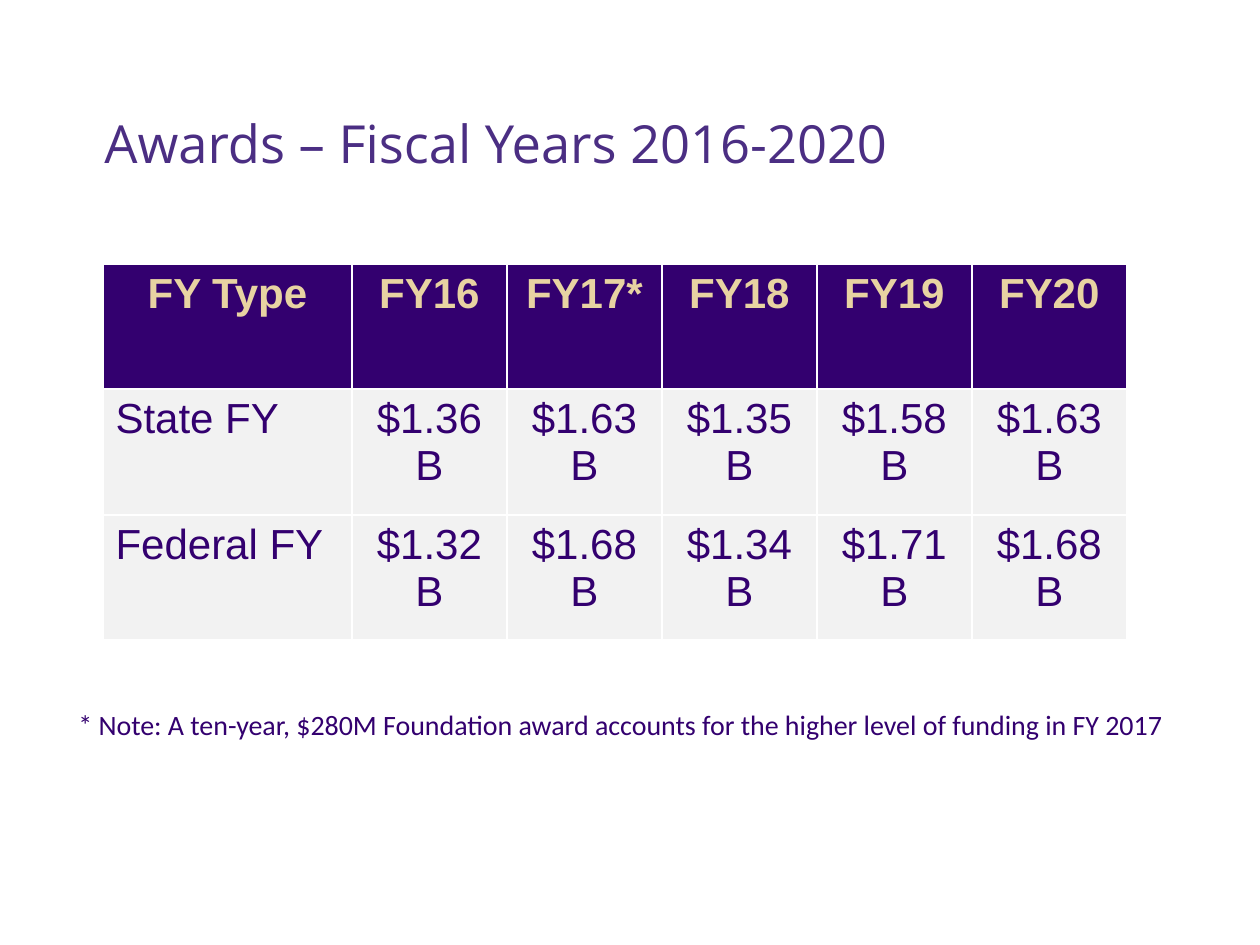
from lxml.etree import SubElement as Sub
from pptx import Presentation
from pptx.dml.color import RGBColor as Rgb
from pptx.enum.text import MSO_ANCHOR as Anchor, PP_ALIGN as Align
from pptx.oxml.ns import qn
from pptx.util import Pt

SCALE = 914400 / 126
COLORS = {
    "title": "4B2E83",
    "ink": "33006F",
    "gold": "E8D3A2",
    "pale": "F2F2F2",
    "rule": "FFFFFF",
}
HEAD = {"name": "Arial", "size": Pt(24), "bold": True}
BODY = {"name": "Arial", "size": Pt(24), "bold": False}
ROWS = [
    ["FY Type", "FY16", "FY17*", "FY18", "FY19", "FY20"],
    ["State FY", "$1.36B", "$1.63B", "$1.35B", "$1.58B", "$1.63B"],
    ["Federal FY", "$1.32B", "$1.68B", "$1.34B", "$1.71B", "$1.68B"],
]
WIDTHS = [249] + [155] * 5
HEIGHTS = [125, 126, 125]


def px(num):
    return round(num * SCALE)


def write(frame, text, color, style):
    """Put one styled paragraph in a text frame and return it."""
    para = frame.paragraphs[0]
    run = para.add_run()
    run.text = text
    for key, value in style.items():
        setattr(run.font, key, value)
    run.font.color.rgb = Rgb.from_string(COLORS[color])
    return para


def add_text(slide, box, text, color, style, layout):
    frame = slide.shapes.add_textbox(*map(px, box)).text_frame
    frame.word_wrap = True
    for key, value in layout.items():
        setattr(frame, key, value)
    return write(frame, text, color, style)


def add_rules(cell):
    """Draw a thin line on all four sides of a cell."""
    props = cell._tc.get_or_add_tcPr()
    for side in ("lnL", "lnR", "lnT", "lnB"):
        line = Sub(props, qn(f"a:{side}"), w=str(Pt(1)))
        fill = Sub(line, qn("a:solidFill"))
        Sub(fill, qn("a:srgbClr"), val=COLORS["rule"])


def fill_cell(cell, text, head, center):
    add_rules(cell)
    cell.fill.solid()
    cell.fill.fore_color.rgb = Rgb.from_string(COLORS["ink" if head else "pale"])
    para = write(cell.text_frame, text, "gold" if head else "ink", HEAD if head else BODY)
    para.alignment = Align.CENTER if center else Align.LEFT


def add_grid(slide, left, top):
    box = (left, top, sum(WIDTHS), sum(HEIGHTS))
    table = slide.shapes.add_table(len(ROWS), len(WIDTHS), *map(px, box)).table
    for col, width in zip(table.columns, WIDTHS):
        col.width = px(width)
    for row, height in zip(table.rows, HEIGHTS):
        row.height = px(height)
    for r, row in enumerate(ROWS):
        for c, text in enumerate(row):
            fill_cell(table.cell(r, c), text, r == 0, r == 0 or c > 0)


def main():
    deck = Presentation()
    deck.slide_width, deck.slide_height = px(1260), px(945)
    slide = deck.slides.add_slide(deck.slide_layouts[6])
    title = add_text(
        slide, (92, 52, 1128, 136), "Awards – Fiscal Years 2016-2020", "title",
        {"name": "Open Sans", "size": Pt(30)},
        {"vertical_anchor": Anchor.BOTTOM, "margin_top": px(13), "margin_bottom": px(13)},
    )
    title.line_spacing = 0.9
    add_text(
        slide, (66, 701, 1129, 105),
        "* Note: A ten-year, $280M Foundation award accounts for"
        " the higher level of funding in FY 2017",
        "ink", {"name": "Calibri", "size": Pt(16)}, {"vertical_anchor": Anchor.TOP},
    )
    add_grid(slide, 103, 264)
    deck.save("out.pptx")


if __name__ == "__main__":
    main()
